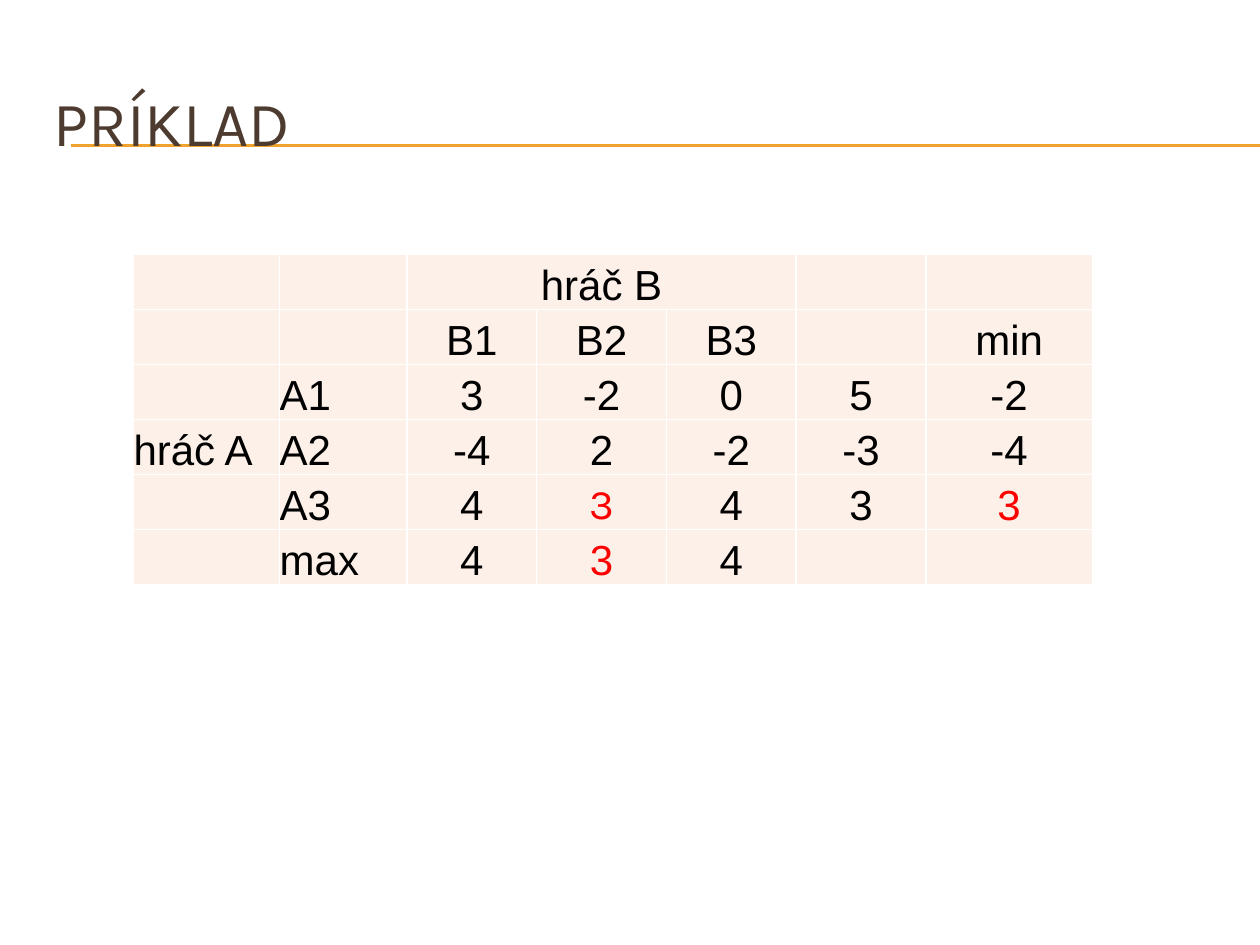
from lxml import etree
from pptx import Presentation
from pptx.dml.color import RGBColor
from pptx.enum import shapes, text
from pptx.oxml import ns
from pptx.util import Inches, Pt


def paint(color, value):
    color.rgb = RGBColor.from_string(value)


def add_borders(cell, value, width):
    properties = cell._tc.get_or_add_tcPr()
    for position, side in enumerate(("a:lnL", "a:lnR", "a:lnT", "a:lnB")):
        line = etree.Element(ns.qn(side), w=str(Pt(width)))
        fill = etree.SubElement(line, ns.qn("a:solidFill"))
        etree.SubElement(fill, ns.qn("a:srgbClr"), val=value)
        properties.insert(position, line)


presentation = Presentation()
presentation.slide_width = Inches(10)
presentation.slide_height = Inches(7.5)
slide = presentation.slides.add_slide(presentation.slide_layouts[6])

for top in (1.15, 1.16):
    rule = slide.shapes.add_connector(
        shapes.MSO_CONNECTOR.STRAIGHT, Inches(0.56), Inches(top), Inches(10), Inches(top))
    paint(rule.line.color, "F0A22E")
    rule.line.width = Pt(0.75)
    etree.SubElement(rule._element.spPr, ns.qn("a:effectLst"))

title = slide.shapes.add_textbox(Inches(0.33), Inches(0.5), Inches(9.5), Inches(0.92))
title.text_frame.word_wrap = True
title.text_frame.vertical_anchor = text.MSO_ANCHOR.MIDDLE
paragraph = title.text_frame.paragraphs[0]
paragraph.text = "PRÍKLAD"
paragraph.font.name = "Karla"
paragraph.font.size = Pt(36)
paint(paragraph.font.color, "4E3B30")

rows = [
    ["", "", "hráč B", "", "", "", ""],
    ["", "", "B1", "B2", "B3", "", "min"],
    ["", "A1", "3", "-2", "0", "5", "-2"],
    ["hráč A", "A2", "-4", "2", "-2", "-3", "-4"],
    ["", "A3", "4", "3", "4", "3", "3"],
    ["", "max", "4", "3", "4", "", ""],
]
widths = [1.16, 1.01, 1.03, 1.03, 1.03, 1.03, 1.32]
saddle_cells = {(4, 3), (4, 6), (5, 3)}

table = slide.shapes.add_table(
    len(rows), len(widths), Inches(1.06), Inches(2.02), Inches(7.61), Inches(2.62)).table
for column, width in zip(table.columns, widths):
    column.width = Inches(width)
table.cell(0, 2).merge(table.cell(0, 4))

for row_index, row in enumerate(rows):
    for column_index, value in enumerate(row):
        cell = table.cell(row_index, column_index)
        cell.fill.solid()
        paint(cell.fill.fore_color, "FCF0E8")
        add_borders(cell, "FFFFFF", 1)
        cell.margin_left = cell.margin_right = cell.margin_top = cell.margin_bottom = 0
        cell.vertical_anchor = text.MSO_ANCHOR.BOTTOM
        paragraph = cell.text_frame.paragraphs[0]
        paragraph.text = value
        paragraph.alignment = text.PP_ALIGN.CENTER if column_index > 1 else text.PP_ALIGN.LEFT
        paragraph.font.name = "Karla" if (row_index, column_index) == (4, 3) else "Arial"
        paragraph.font.size = Pt(24)
        paint(paragraph.font.color, "FF0000" if (row_index, column_index) in saddle_cells else "000000")

presentation.save("out.pptx")
